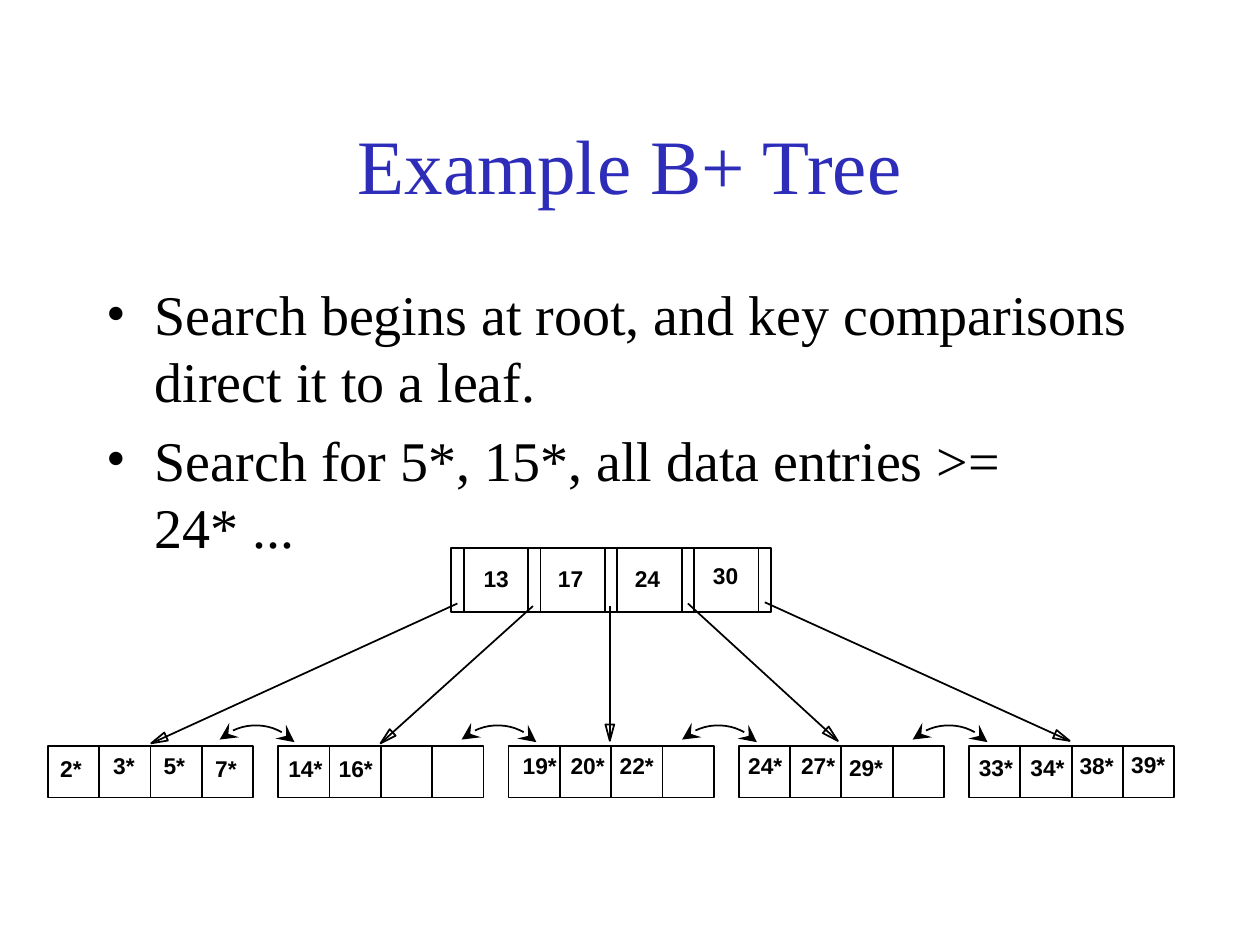
from math import atan2, cos, hypot, pi, sin

from lxml import etree
from pptx import Presentation
from pptx.dml.color import RGBColor
from pptx.enum.shapes import MSO_CONNECTOR, MSO_SHAPE
from pptx.enum.text import MSO_ANCHOR, MSO_AUTO_SIZE, PP_ALIGN
from pptx.oxml.ns import qn
from pptx.util import Inches, Pt

RECT = MSO_SHAPE.RECTANGLE
LINE = MSO_CONNECTOR.STRAIGHT
MIDDLE = MSO_ANCHOR.MIDDLE
GROW = MSO_AUTO_SIZE.SHAPE_TO_FIT_TEXT
CENTER = PP_ALIGN.CENTER

THEME = {
    "title": ("Times New Roman", 44, "2D2DB9", False),
    "body": ("Times New Roman", 32, "000000", False),
    "key": ("Arial", 13, "000000", True),
    "line": ("000000", 1),
}

TITLE = "Example B+ Tree"
POINTS = [
    "Search begins at root, and key comparisons direct it to a leaf.",
    "Search for 5*, 15*, all data entries >= 24* ...",
]
# Each key: text, left and top of its label
ROOT = [("13", 3.74, 4.43), ("17", 4.33, 4.43), ("24", 4.94, 4.43), ("30", 5.56, 4.41)]
LEAVES = [
    [("2*", 0.38, 5.94), ("3*", 0.8, 5.92), ("5*", 1.2, 5.92), ("7*", 1.61, 5.94)],
    [("14*", 2.19, 5.94), ("16*", 2.59, 5.94)],
    [("19*", 4.05, 5.92), ("20*", 4.43, 5.92), ("22*", 4.82, 5.92)],
    [("24*", 5.84, 5.92), ("27*", 6.26, 5.92), ("29*", 6.64, 5.93)],
    [("33*", 7.67, 5.93), ("34*", 8.08, 5.93), ("38*", 8.47, 5.92), ("39*", 8.88, 5.91)],
]
# Child pointers: start and tip
ARROWS = [
    ((3.63, 4.79), (1.2, 5.9)),
    ((4.23, 4.81), (3.02, 5.9)),
    ((4.84, 4.81), (4.84, 5.88)),
    ((5.46, 4.79), (6.65, 5.88)),
    ((6.07, 4.78), (8.49, 5.88)),
]
LINKS = [1.83, 3.75, 5.5, 7.33]

ROOT_X, ROOT_Y, ROOT_W, ROOT_H, SLOT = 3.58, 4.35, 0.61, 0.51, 0.1
LEAF_X, LEAF_END, LEAF_Y = 0.38, 7.69, 5.92
LEAF_W, LEAF_H, CELLS = 1.63, 0.41, 4
LABEL_W = {"13": 0.4, "2*": 0.37, "14*": 0.47}
HEAD_L, HEAD_W = 0.13, 0.07
LINK_Y, LINK_R, LINK_TURN, STEPS = 5.67, 0.42, 317, 16

prs = Presentation()
prs.slide_width, prs.slide_height = Inches(10), Inches(7.5)
slide = prs.slides.add_slide(prs.slide_layouts[6])
shapes = slide.shapes


def ink(shape):
    color, width = THEME["line"]
    shape.line.color.rgb = RGBColor.from_string(color)
    shape.line.width = Pt(width)


def box(x, y, w, h):
    rect = shapes.add_shape(RECT, Inches(x), Inches(y), Inches(w), Inches(h))
    rect.shadow.inherit = False
    rect.fill.background()
    ink(rect)


def rule(start, end):
    line = shapes.add_connector(LINE, *(Inches(v) for v in (*start, *end)))
    ink(line)
    etree.SubElement(line._element.spPr, qn("a:effectLst"))


def trace(points, close):
    """Draw an unfilled outline through points given in inches."""
    dots = [(Inches(x), Inches(y)) for x, y in points]
    pen = shapes.build_freeform(*dots[0])
    pen.add_line_segments(dots[1:], close=close)
    path = pen.convert_to_shape()
    path.shadow.inherit = False
    path.fill.background()
    ink(path)
    return path


def text(lines, x, y, w, h, style, wrap=True):
    frame = shapes.add_textbox(Inches(x), Inches(y), Inches(w), Inches(h)).text_frame
    frame.word_wrap = wrap
    frame.text = "\n".join(lines)
    name, size, color, bold = THEME[style]
    for para in frame.paragraphs:
        font = para.runs[0].font
        font.name, font.size, font.bold = name, Pt(size), bold
        font.color.rgb = RGBColor.from_string(color)
    return frame


def label(key, x, y):
    width = LABEL_W["13"] if key.isdigit() else LABEL_W["2*" if len(key) == 2 else "14*"]
    text([key], x, y, width, 0.32, "key", wrap=False).auto_size = GROW


def arrow(start, tip):
    """Draw a line that ends in a hollow triangle."""
    rule(start, tip)
    dx, dy = tip[0] - start[0], tip[1] - start[1]
    span, turn = hypot(dx, dy), atan2(dy, dx)
    bx, by = tip[0] - HEAD_L * dx / span, tip[1] - HEAD_L * dy / span
    ox, oy = HEAD_W / 2 * sin(turn), HEAD_W / 2 * cos(turn)
    trace([(bx + ox, by - oy), tip, (bx - ox, by + oy)], True)


def link(x):
    """Draw a quarter circle with two heads, turned to arch between leaves."""
    angles = [pi / 2 * i / STEPS for i in range(STEPS + 1)]
    arc = trace([(x + LINK_R * sin(a), LINK_Y + LINK_R * (1 - cos(a))) for a in angles], False)
    arc.rotation = LINK_TURN
    for end in ("a:headEnd", "a:tailEnd"):
        etree.SubElement(arc.line._get_or_add_ln(), qn(end), type="stealth", w="lg", len="lg")


head = text([TITLE], 0.75, 0.67, 8.5, 1.25, "title")
head.vertical_anchor = MIDDLE
head.paragraphs[0].alignment = CENTER

for para in text(POINTS, 0.75, 2.17, 8.5, 4.5, "body").paragraphs:
    para.space_before = Pt(6.4)
    props = para._p.get_or_add_pPr()
    props.set("marL", str(Inches(0.38)))
    props.set("indent", str(Inches(-0.38)))
    etree.SubElement(props, qn("a:buFont"), typeface=THEME["body"][0])
    etree.SubElement(props, qn("a:buChar"), char="•")

for i in range(len(ROOT)):
    x = ROOT_X + i * ROOT_W
    box(x, ROOT_Y, ROOT_W, ROOT_H)
    rule((x + SLOT, ROOT_Y), (x + SLOT, ROOT_Y + ROOT_H))
box(ROOT_X + len(ROOT) * ROOT_W, ROOT_Y, SLOT, ROOT_H)

step = (LEAF_END - LEAF_X) / (len(LEAVES) - 1)
cell = LEAF_W / CELLS
for i in range(len(LEAVES)):
    for j in range(CELLS):
        box(LEAF_X + i * step + j * cell, LEAF_Y, cell, LEAF_H)

for start, tip in ARROWS:
    arrow(start, tip)
for keys in [ROOT, *LEAVES]:
    for key in keys:
        label(*key)
for x in LINKS:
    link(x)

prs.save("out.pptx")
